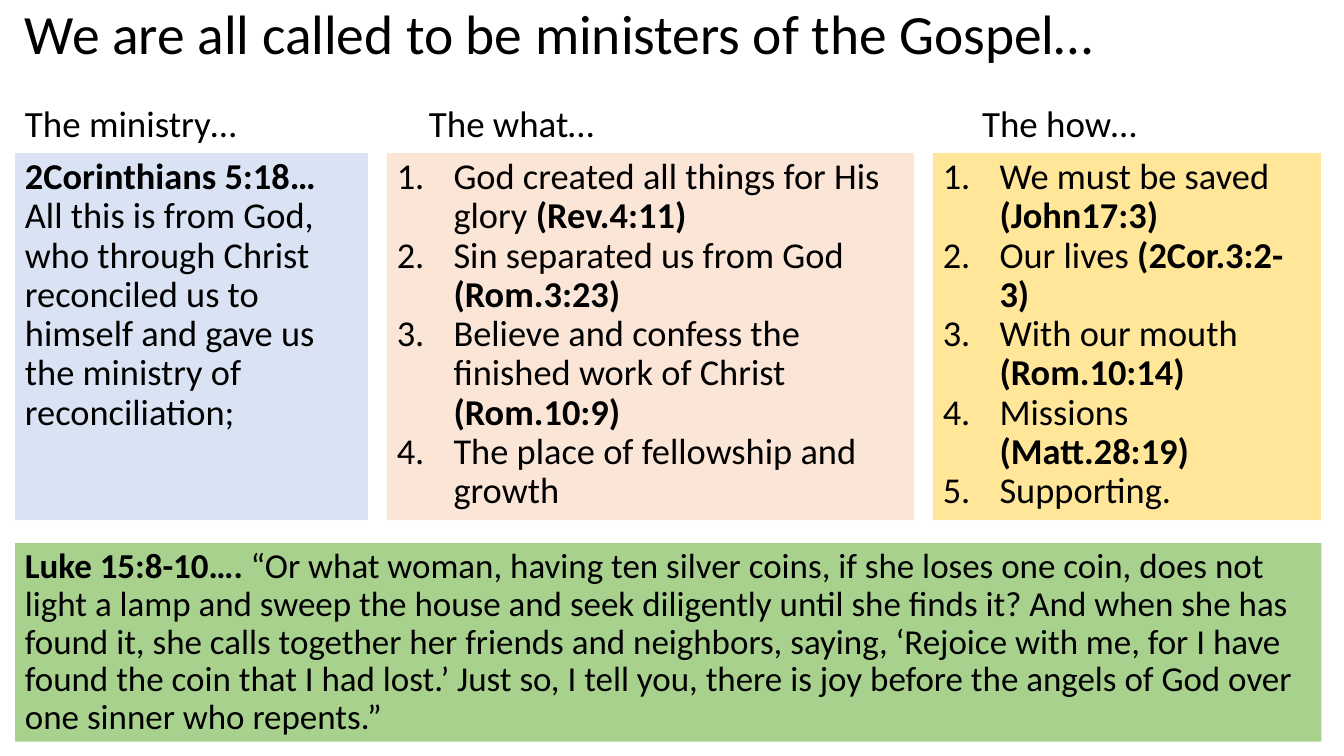
from lxml.etree import SubElement
from pptx import Presentation
from pptx.dml.color import RGBColor
from pptx.enum.shapes import MSO_SHAPE
from pptx.enum.text import MSO_ANCHOR, PP_ALIGN
from pptx.oxml.ns import qn
from pptx.util import Cm, Pt

BLACK = RGBColor(0x00, 0x00, 0x00)
WHITE = RGBColor(0xFF, 0xFF, 0xFF)
BLUE = RGBColor(0xDA, 0xE3, 0xF3)
PEACH = RGBColor(0xFB, 0xE5, 0xD6)
YELLOW = RGBColor(0xFF, 0xE6, 0x99)
GREEN = RGBColor(0xA9, 0xD1, 0x8E)

MARGIN = 0.38
GAP = 0.48
HEADING_HEIGHT = 1.12
HEADING_OFFSET = 1.19
LIST_INDENT = Cm(1.43)

MINISTRY = [
    [("2Corinthians 5:18…", True)],
    [("All this is from God, who through Christ reconciled us to himself "
      "and gave us the ministry of reconciliation;", False)],
]
WHAT = [
    [("God created all things for His glory ", False), ("(Rev.4:11)", True)],
    [("Sin separated us from God ", False), ("(Rom.3:23)", True)],
    [("Believe and confess the finished work of Christ ", False), ("(Rom.10:9)", True)],
    [("The place of fellowship and growth", False)],
]
HOW = [
    [("We must be saved ", False), ("(John17:3)", True)],
    [("Our lives ", False), ("(2Cor.3:2-3)", True)],
    [("With our mouth ", False), ("(Rom.10:14)", True)],
    [("Missions ", False), ("(Matt.28:19)", True)],
    [("Supporting.", False)],
]
PARABLE = [[
    ("Luke 15:8-10…. ", True),
    ("“Or what woman, having ten silver coins, if she loses one coin, does not light "
     "a lamp and sweep the house and seek diligently until she finds it? And when she "
     "has found it, she calls together her friends and neighbors, saying, ‘Rejoice with "
     "me, for I have found the coin that I had lost.’ Just so, I tell you, there is joy "
     "before the angels of God over one sinner who repents.”", False),
]]
COLUMNS = [
    ("The ministry…", 0, 8.89, BLUE, MINISTRY, False),
    ("The what…", 0.81, 13.28, PEACH, WHAT, True),
    ("The how…", 0.99, 9.78, YELLOW, HOW, True),
]


def number_paragraph(paragraph):
    """Give a paragraph a hanging indent and an automatic number."""
    properties = paragraph._p.get_or_add_pPr()
    properties.set("marL", str(LIST_INDENT))
    properties.set("indent", str(-LIST_INDENT))
    SubElement(properties, qn("a:buFont"), typeface="+mj-lt")
    SubElement(properties, qn("a:buAutoNum"), type="arabicPeriod")


def write_text(shape, paragraphs, size=26, spacing=0.9, anchor=MSO_ANCHOR.TOP, numbered=False):
    """Fill a shape with paragraphs given as lists of (text, bold) pairs."""
    frame = shape.text_frame
    frame.word_wrap = True
    frame.vertical_anchor = anchor
    for index, runs in enumerate(paragraphs):
        paragraph = frame.add_paragraph() if index else frame.paragraphs[0]
        paragraph.alignment = PP_ALIGN.LEFT
        paragraph.line_spacing = spacing
        if numbered:
            number_paragraph(paragraph)
        for text, bold in runs:
            run = paragraph.add_run()
            run.text = text
            run.font.name = "Calibri"
            run.font.size = Pt(size)
            run.font.bold = bold
            run.font.color.rgb = BLACK


def add_panel(slide, left, top, width, height, color, paragraphs, **text_format):
    """Add a filled rectangle with text in the given box."""
    shape = slide.shapes.add_shape(
        MSO_SHAPE.RECTANGLE, Cm(left), Cm(top), Cm(width), Cm(height))
    shape.shadow.inherit = False
    shape.fill.solid()
    shape.fill.fore_color.rgb = color
    shape.line.fill.background()
    write_text(shape, paragraphs, **text_format)


def add_heading(slide, left, top, width, text, **text_format):
    """Add a single line of text, centred vertically in its box."""
    add_panel(slide, left, top, width, HEADING_HEIGHT, WHITE, [[(text, False)]],
              anchor=MSO_ANCHOR.MIDDLE, **text_format)


def add_columns(slide, left, top, height):
    """Add the headed panels side by side with equal gaps."""
    for heading, shift, width, color, paragraphs, numbered in COLUMNS:
        add_heading(slide, left + shift, top, width - shift, heading, size=26.4, spacing=0.7)
        add_panel(slide, left, top + HEADING_OFFSET, width, height - HEADING_OFFSET,
                  color, paragraphs, numbered=numbered)
        left += width + GAP


def main():
    """Build the slide and save it."""
    presentation = Presentation()
    presentation.slide_width = Cm(33.87)
    presentation.slide_height = Cm(19.05)
    slide = presentation.slides.add_slide(presentation.slide_layouts[6])
    add_heading(slide, MARGIN, 0.36, 31.32,
                "We are all called to be ministers of the Gospel…", size=39.6)
    add_columns(slide, MARGIN, 2.67, 10.44)
    add_panel(slide, MARGIN, 13.69, 32.92, 5, GREEN, PARABLE, size=25)
    presentation.save("out.pptx")


if __name__ == "__main__":
    main()
